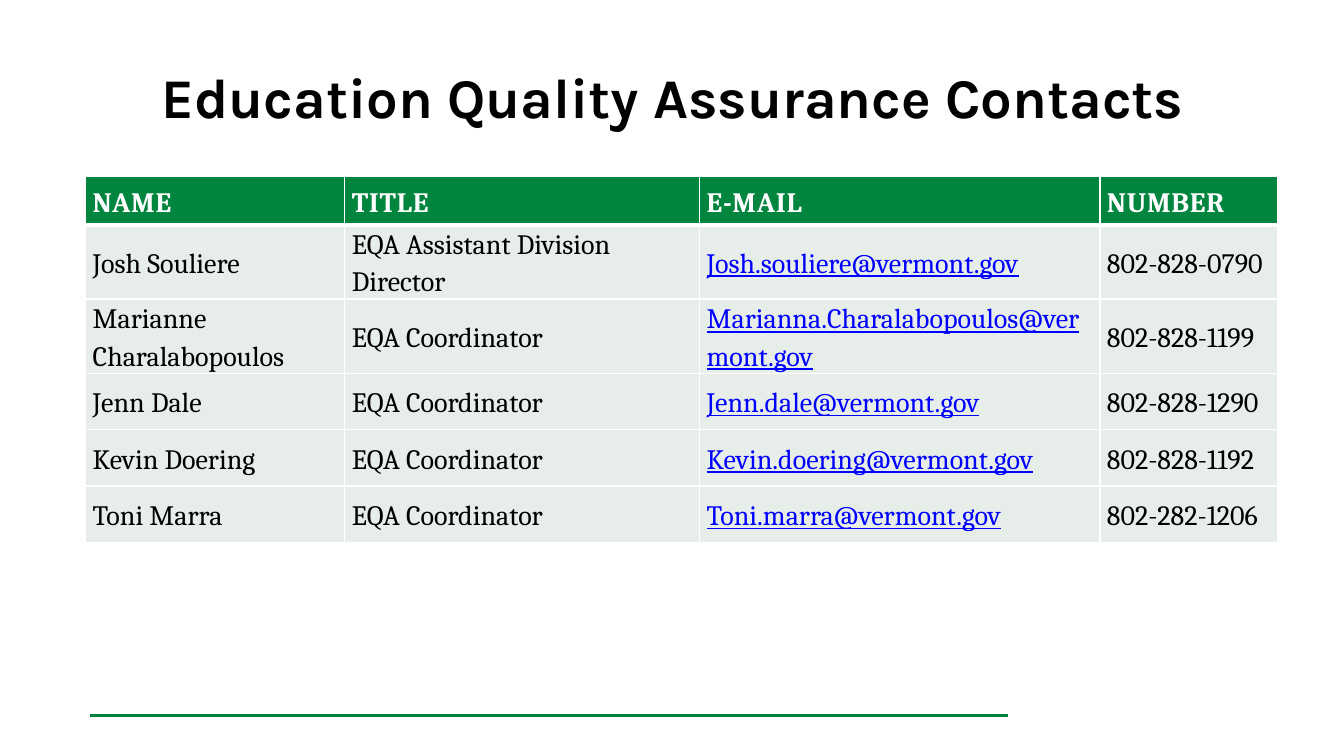
"""Build the Education Quality Assurance contacts slide."""
from lxml import etree
from pptx import Presentation
from pptx.dml.color import RGBColor
from pptx.enum.shapes import MSO_CONNECTOR
from pptx.enum.text import MSO_ANCHOR, PP_ALIGN
from pptx.oxml.ns import qn
from pptx.util import Inches, Pt

STRAIGHT = MSO_CONNECTOR.STRAIGHT
MIDDLE = MSO_ANCHOR.MIDDLE
CENTER = PP_ALIGN.CENTER

TITLE = "Education Quality Assurance Contacts"
HEADER = ("NAME", "TITLE", "E-MAIL", "NUMBER")
CONTACTS = [
    ("Josh Souliere", "EQA Assistant Division Director",
     "Josh.souliere@vermont.gov", "802-828-0790"),
    ("Marianne Charalabopoulos", "EQA Coordinator",
     "Marianna.Charalabopoulos@vermont.gov", "802-828-1199"),
    ("Jenn Dale", "EQA Coordinator", "Jenn.dale@vermont.gov", "802-828-1290"),
    ("Kevin Doering", "EQA Coordinator", "Kevin.doering@vermont.gov", "802-828-1192"),
    ("Toni Marra", "EQA Coordinator", "Toni.marra@vermont.gov", "802-282-1206"),
]
COL_WIDTHS = (2.57, 3.52, 3.97, 1.76)
HEADER_HEIGHT, ROW_HEIGHT = 0.48, 0.56
EMAIL_COL = HEADER.index("E-MAIL")
BLACK, WHITE, LINK = "000000", "FFFFFF", "0000FF"
HEADER_FILL, BODY_FILL, RULE = "00853F", "E7EDE8", "00823E"


def rgb(color):
    return RGBColor.from_string(color)


def add_run(p, text, font, size, color, bold=False):
    r = p.add_run()
    r.text = text
    r.font.name = font
    r.font.size = Pt(size)
    r.font.bold = bold
    r.font.color.rgb = rgb(color)
    return r


def set_borders(cell, top, bottom):
    tc_pr = cell._tc.get_or_add_tcPr()
    for side, width in (("L", 1), ("R", 1), ("T", top), ("B", bottom)):
        ln = etree.SubElement(tc_pr, qn(f"a:ln{side}"), w=str(Pt(width)))
        fill = etree.SubElement(ln, qn("a:solidFill"))
        etree.SubElement(fill, qn("a:srgbClr"), val=WHITE)


def fill_cell(cell, text, row, col):
    is_header = row == 0
    set_borders(cell, 3 if row == 1 else 1, 3 if is_header else 1)
    cell.fill.solid()
    cell.fill.fore_color.rgb = rgb(HEADER_FILL if is_header else BODY_FILL)
    cell.vertical_anchor = MIDDLE
    cell.margin_left = cell.margin_right = Inches(0.07)
    cell.margin_top = cell.margin_bottom = 0
    p = cell.text_frame.paragraphs[0]
    p.line_spacing = 1.15
    is_email = col == EMAIL_COL and not is_header
    color = WHITE if is_header else LINK if is_email else BLACK
    r = add_run(p, text, "Cambria", 20, color, is_header)
    if is_header:
        r.font._element.set("spc", "50")
    if is_email:
        r.font.underline = True


def add_contacts(slide):
    rows = [HEADER] + CONTACTS
    heights = [HEADER_HEIGHT] + [ROW_HEIGHT] * len(CONTACTS)
    table = slide.shapes.add_table(
        len(rows), len(HEADER), Inches(0.85), Inches(1.75),
        Inches(sum(COL_WIDTHS)), Inches(sum(heights))).table
    table.first_row = table.horz_banding = False
    for column, width in zip(table.columns, COL_WIDTHS):
        column.width = Inches(width)
    for i, (values, height) in enumerate(zip(rows, heights)):
        table.rows[i].height = Inches(height)
        for j, text in enumerate(values):
            fill_cell(table.cell(i, j), text, i, j)


def main():
    prs = Presentation()
    prs.slide_width, prs.slide_height = Inches(13.33), Inches(7.5)
    slide = prs.slides.add_slide(prs.slide_layouts[5])

    rule = slide.shapes.add_connector(
        STRAIGHT, Inches(0.89), Inches(7.1), Inches(10), Inches(7.1))
    rule.line.color.rgb = rgb(RULE)
    rule.line.width = Pt(2.25)
    etree.SubElement(rule._element.spPr, qn("a:effectLst"))

    title = slide.shapes.title
    title.left, title.top = Inches(0.67), Inches(0.33)
    title.width, title.height = Inches(12), Inches(1.25)
    tf = title.text_frame
    tf.vertical_anchor = MIDDLE
    p = tf.paragraphs[0]
    p.alignment = CENTER
    add_run(p, TITLE, "Karla", 40, BLACK, True)

    add_contacts(slide)
    prs.save("out.pptx")


if __name__ == "__main__":
    main()
